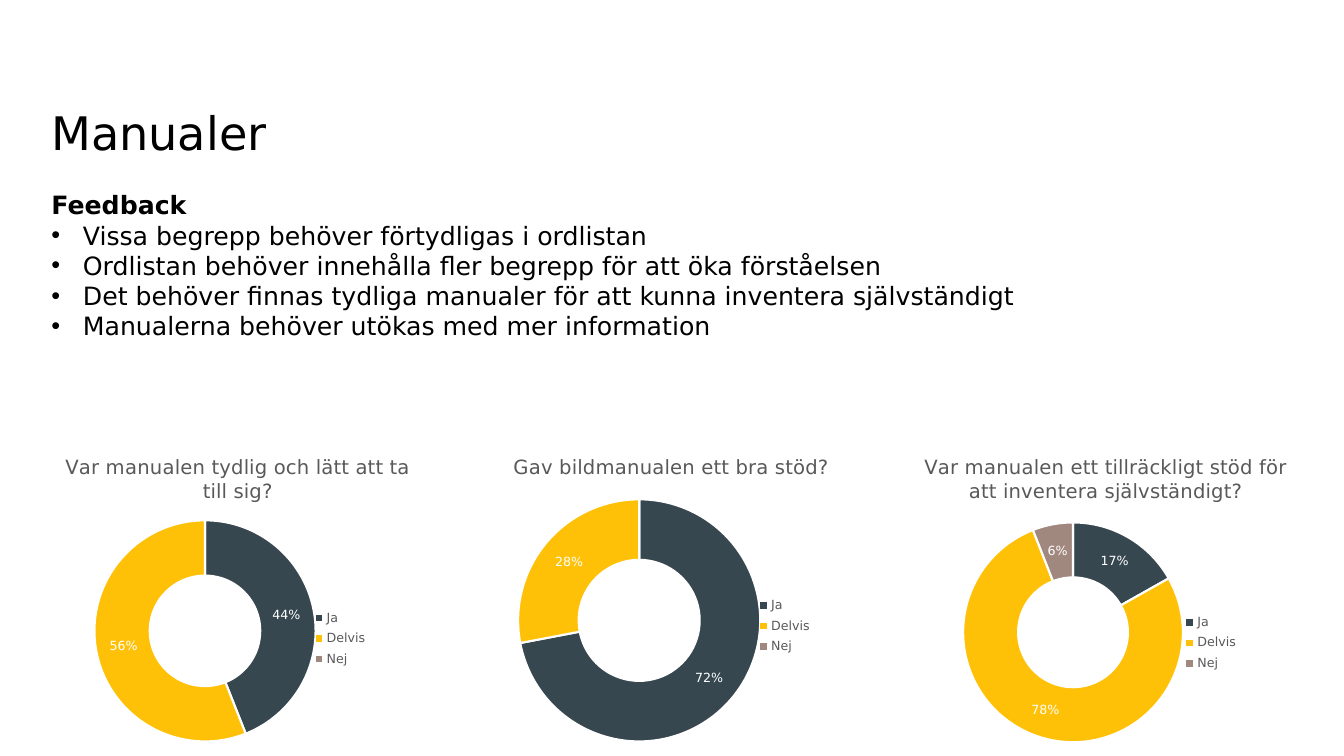
from dataclasses import dataclass
from lxml import etree
from pptx import Presentation
from pptx.chart.data import CategoryChartData
from pptx.dml.color import RGBColor as Color
from pptx.enum.chart import XL_CHART_TYPE as ChartType, XL_LEGEND_POSITION as LegendPosition
from pptx.enum.text import MSO_ANCHOR as Anchor
from pptx.oxml import parse_xml
from pptx.oxml.ns import nsdecls, qn
from pptx.util import Pt


@dataclass(frozen=True)
class Theme:
    font: str = "DejaVu Sans"
    black: str = "000000"
    grey: str = "595959"
    white: str = "FFFFFF"
    answers: tuple = ("37474F", "FFC107", "A1887F")
    heading: float = 33
    body: float = 18
    chart_title: float = 14
    chart_text: float = 10
    label: float = 9


theme = Theme()


def style(font, size, color, bold=False):
    font.name, font.size, font.bold = theme.font, Pt(size), bold
    font.color.rgb = Color.from_string(color)


def place(part, left, top, width, height, target=""):
    """Give a chart part a fixed frame, in points within the chart."""
    for old in part.findall(qn("c:layout")):
        part.remove(old)
    layout = parse_xml(
        f'<c:layout {nsdecls("c")}><c:manualLayout>{target}'
        '<c:xMode val="edge"/><c:yMode val="edge"/>'
        f'<c:x val="{left / CHART_WIDTH:.4f}"/><c:y val="{top / CHART_HEIGHT:.4f}"/>'
        f'<c:w val="{width / CHART_WIDTH:.4f}"/><c:h val="{height / CHART_HEIGHT:.4f}"/>'
        '</c:manualLayout></c:layout>')
    position = part.find(qn("c:legendPos"))
    if position is None:
        part.insert(0, layout)
    else:
        position.addnext(layout)


deck = Presentation()
deck.slide_width, deck.slide_height = Pt(960), Pt(540)
page = deck.slides.add_slide(deck.slide_layouts[6])

# Heading and feedback list
MARGIN = 36.7
INDENT = 22.5
texts = [
    (31, 680.4, 82.8, Anchor.BOTTOM, theme.heading, ["Manualer"]),
    (135.4, 879, 108.7, Anchor.TOP, theme.body, [
        "Feedback",
        "Vissa begrepp behöver förtydligas i ordlistan",
        "Ordlistan behöver innehålla fler begrepp för att öka förståelsen",
        "Det behöver finnas tydliga manualer för att kunna inventera självständigt",
        "Manualerna behöver utökas med mer information",
    ]),
]
for top, width, height, anchor, size, lines in texts:
    box = page.shapes.add_textbox(Pt(MARGIN), Pt(top), Pt(width), Pt(height))
    frame = box.text_frame
    frame.word_wrap = True
    frame.vertical_anchor = anchor
    frame.margin_left = frame.margin_right = frame.margin_top = frame.margin_bottom = 0
    for index, line in enumerate(lines):
        para = frame.paragraphs[0] if index == 0 else frame.add_paragraph()
        span = para.add_run()
        span.text = line
        style(span.font, size, theme.black, bold=line == "Feedback")
        if index:
            settings = para._p.get_or_add_pPr()
            settings.set("marL", str(Pt(INDENT)))
            settings.set("indent", str(-Pt(INDENT)))
            etree.SubElement(settings, qn("a:buFont")).set("typeface", "Arial")
            etree.SubElement(settings, qn("a:buChar")).set("char", "•")

# Doughnut charts: left, title, values, ring (left, top, size), legend (left, top)
CHART_TOP, CHART_WIDTH, CHART_HEIGHT = 313.2, 339.8, 226.8
charts = [
    (620, "Var manualen ett tillräckligt stöd för att inventera självständigt?",
     (17, 78, 6), (68, 60, 157), (221, 122)),
    (309.6, "Gav bildmanualen ett bra stöd?",
     (72, 28, 0), (60.5, 43.5, 173), (227, 110)),
    (0, "Var manualen tydlig och lätt att ta till sig?",
     (44, 56, 0), (67.5, 58.5, 158), (219, 119)),
]
for left, question, values, (ring_left, ring_top, ring_size), legend_corner in charts:
    data = CategoryChartData(number_format="0")
    data.categories = ["Ja", "Delvis", "Nej"]
    data.add_series("Series 1", values)
    chart = page.shapes.add_chart(
        ChartType.DOUGHNUT, Pt(left), Pt(CHART_TOP),
        Pt(CHART_WIDTH), Pt(CHART_HEIGHT), data).chart
    style(chart.font, theme.chart_text, theme.black)

    # Title
    chart.has_title = True
    span = chart.chart_title.text_frame.paragraphs[0].add_run()
    span.text = question
    style(span.font, theme.chart_title, theme.grey)
    chart.chart_title.include_in_layout = False

    # Legend
    chart.has_legend = True
    chart.legend.position = LegendPosition.RIGHT
    chart.legend.include_in_layout = False
    style(chart.legend.font, theme.label, theme.grey)
    place(chart.legend._element, *legend_corner, 48, 48)

    # Ring
    plot = chart.plots[0]
    plot.vary_by_categories = True
    plot._element.find(qn("c:holeSize")).set("val", "50")
    place(chart._chartSpace.chart.plotArea, ring_left, ring_top, ring_size, ring_size,
          '<c:layoutTarget val="inner"/>')
    for index, color in enumerate(theme.answers):
        slice_format = plot.series[0].points[index].format
        slice_format.fill.solid()
        slice_format.fill.fore_color.rgb = Color.from_string(color)
        slice_format.line.color.rgb = Color.from_string(theme.white)
        slice_format.line.width = Pt(1.5)

    # Share labels, blank for zero
    plot.has_data_labels = True
    labels = plot.data_labels
    labels.show_value, labels.show_percentage = True, False
    labels.number_format, labels.number_format_is_linked = '0"%";;', False
    style(labels.font, theme.label, theme.white)

deck.save("out.pptx")
